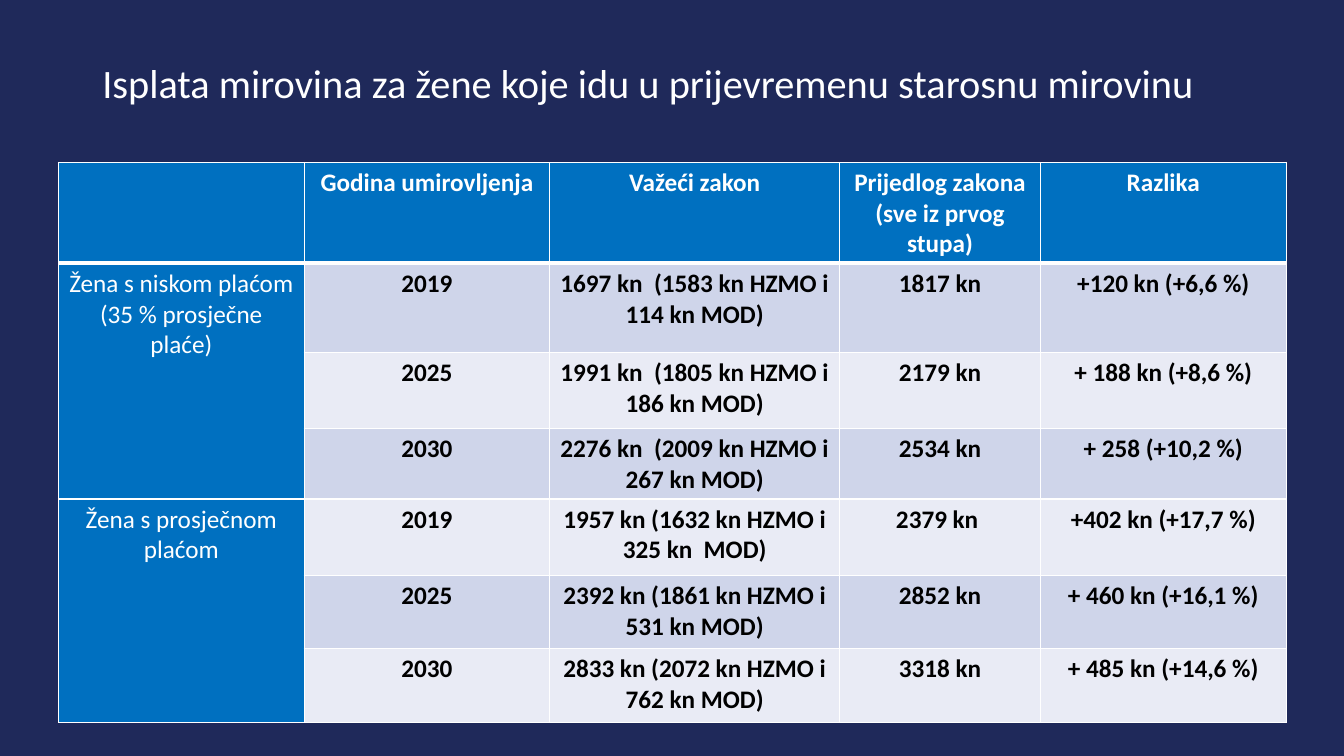
from lxml.etree import SubElement
from pptx import Presentation
from pptx.dml.color import RGBColor
from pptx.enum.text import MSO_ANCHOR, PP_ALIGN
from pptx.oxml.ns import qn
from pptx.util import Pt

COLORS = {
    "background": "1F295A",
    "label": "0070C0",
    "odd": "CFD5EA",
    "even": "E9EBF5",
    "light": "FFFFFF",
    "dark": "000000",
}


def style_text(paragraph, size, color, bold):
    paragraph.font.name = "Calibri"
    paragraph.font.size = Pt(size)
    paragraph.font.bold = bold
    paragraph.font.color.rgb = RGBColor.from_string(COLORS[color])


def style_cell(cell, fill, bottom_width):
    properties = cell._tc.get_or_add_tcPr()
    for side in ("lnL", "lnR", "lnT", "lnB"):
        width = bottom_width if side == "lnB" else 1
        line = SubElement(properties, qn(f"a:{side}"), w=str(Pt(width)))
        solid = SubElement(line, qn("a:solidFill"))
        SubElement(solid, qn("a:srgbClr"), val=COLORS["light"])
    cell.fill.solid()
    cell.fill.fore_color.rgb = RGBColor.from_string(COLORS[fill])


prs = Presentation()
prs.slide_width, prs.slide_height = Pt(960), Pt(540)
slide = prs.slides.add_slide(prs.slide_layouts[6])
slide.background.fill.solid()
slide.background.fill.fore_color.rgb = RGBColor.from_string(COLORS["background"])

title = slide.shapes.add_textbox(Pt(66), Pt(28.75), Pt(828), Pt(64)).text_frame
title.word_wrap = True
title.vertical_anchor = MSO_ANCHOR.MIDDLE
title.text = "Isplata mirovina za žene koje idu u prijevremenu starosnu mirovinu"
title.paragraphs[0].line_spacing = 0.9
style_text(title.paragraphs[0], 28.8, "light", False)

rows = [
    ["", "Godina umirovljenja", "Važeći zakon", "Prijedlog zakona (sve iz prvog stupa)", "Razlika"],
    ["Žena s niskom plaćom (35 % prosječne plaće)", "2019",
     "1697 kn  (1583 kn HZMO i 114 kn MOD)", "1817 kn", "+120 kn (+6,6 %)"],
    ["", "2025", "1991 kn  (1805 kn HZMO i 186 kn MOD)", "2179 kn", "+ 188 kn (+8,6 %)"],
    ["", "2030", "2276 kn  (2009 kn HZMO i 267 kn MOD)", "2534 kn", "+ 258 (+10,2 %)"],
    ["Žena s prosječnom plaćom", "2019",
     "1957 kn (1632 kn HZMO i 325 kn  MOD)", "2379 kn ", "+402 kn (+17,7 %)"],
    ["", "2025", "2392 kn (1861 kn HZMO i 531 kn MOD)", "2852 kn", "+ 460 kn (+16,1 %)"],
    ["", "2030", "2833 kn (2072 kn HZMO i 762 kn MOD)", "3318 kn", "+ 485 kn (+14,6 %)"],
]
column_widths = [175.5, 175.5, 207, 143.5, 175.5]
row_heights = [67, 64, 54, 47.5, 54.5, 52.5, 52.5]

pensions = slide.shapes.add_table(
    len(rows), len(column_widths), Pt(41.75), Pt(116),
    Pt(sum(column_widths)), Pt(sum(row_heights))).table
for column, width in zip(pensions.columns, column_widths):
    column.width = Pt(width)
for row, height in zip(pensions.rows, row_heights):
    row.height = Pt(height)

for r, texts in enumerate(rows):
    for c, text in enumerate(texts):
        cell = pensions.cell(r, c)
        is_label = r == 0 or c == 0
        band = "odd" if r % 2 else "even"
        style_cell(cell, "label" if is_label else band, 3 if r == 0 else 1)
        cell.text = text
        paragraph = cell.text_frame.paragraphs[0]
        paragraph.alignment = PP_ALIGN.CENTER
        style_text(paragraph, 18, "light" if is_label else "dark", r == 0 or c > 0)

for first in (1, 4):
    pensions.cell(first, 0).merge(pensions.cell(first + 2, 0))

prs.save("out.pptx")
